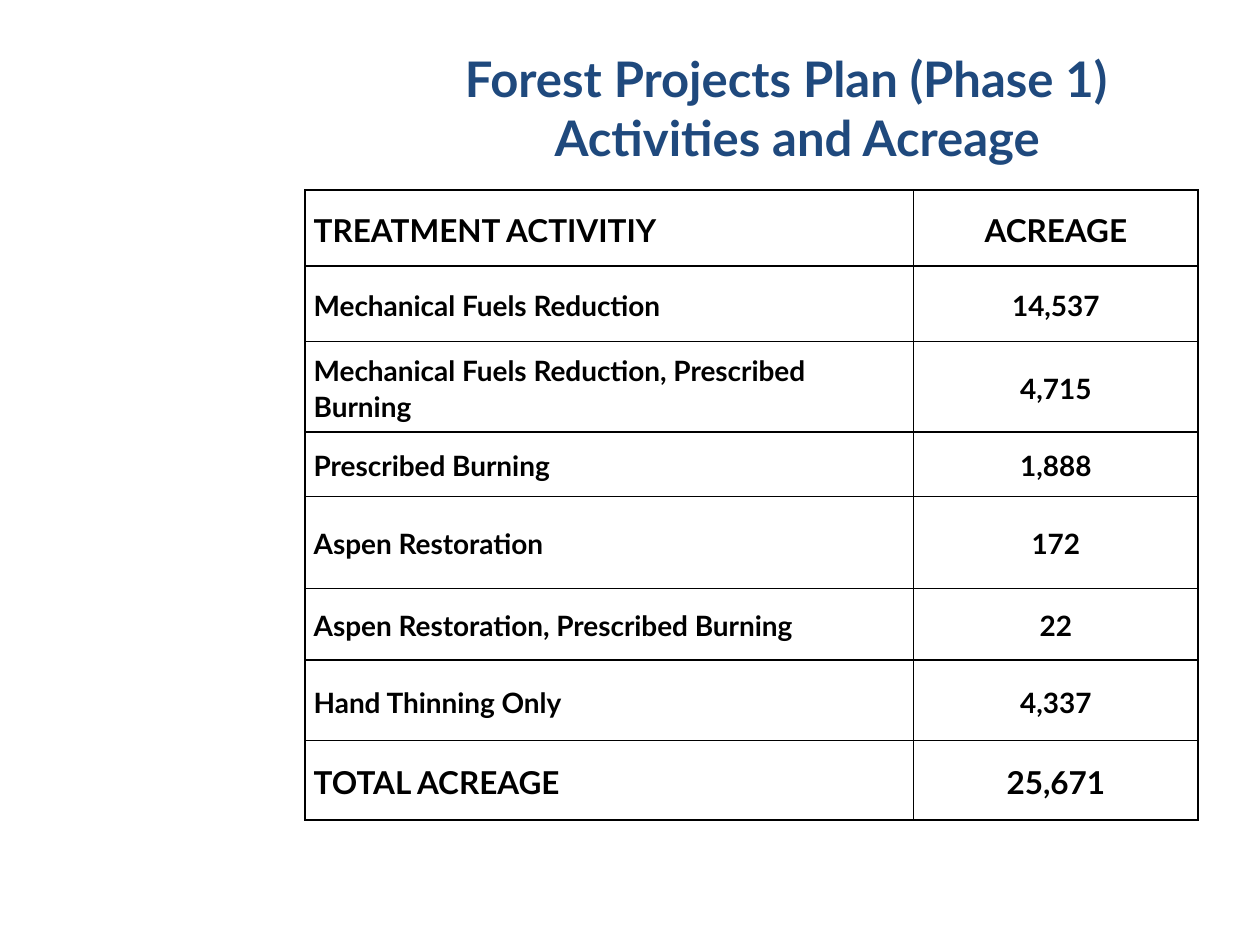
from lxml.etree import SubElement
from pptx import Presentation
from pptx.dml.color import RGBColor
from pptx.enum.text import MSO_ANCHOR as Anchor, MSO_AUTO_SIZE as AutoSize, PP_ALIGN as Align
from pptx.oxml.ns import qn
from pptx.util import Inches, Pt

FONT = "Lato"
BLACK = "000000"
TITLE_BLUE = "1F497D"
TITLE_LINES = ["Forest Projects Plan (Phase 1) ", " Activities and Acreage"]
COLUMN_WIDTHS = [4.83, 2.26]
ROWS = [
    (0.6, 18, "TREATMENT ACTIVITIY", "ACREAGE"),
    (0.6, 16, "Mechanical Fuels Reduction", "14,537"),
    (0.72, 16, "Mechanical Fuels Reduction, Prescribed Burning", "4,715"),
    (0.51, 16, "Prescribed Burning", "1,888"),
    (0.73, 16, "Aspen Restoration", "172"),
    (0.57, 16, "Aspen Restoration, Prescribed Burning", "22"),
    (0.64, 16, "Hand Thinning Only", "4,337"),
    (0.63, 18, "TOTAL ACREAGE", "25,671"),
]


def color(hex_string):
    """Turn a hex string into a colour."""
    return RGBColor.from_string(hex_string)


def add_run(paragraph, text, size, hex_string):
    """Add one bold run to a paragraph."""
    run = paragraph.add_run()
    run.text = text
    run.font.name = FONT
    run.font.size = Pt(size)
    run.font.bold = True
    run.font.color.rgb = color(hex_string)


def add_borders(cell, hex_string, width):
    """Draw a solid line on all four sides of a cell."""
    properties = cell._tc.get_or_add_tcPr()
    for side in ("lnL", "lnR", "lnT", "lnB"):
        line = SubElement(properties, qn(f"a:{side}"), w=str(Pt(width)))
        fill = SubElement(line, qn("a:solidFill"))
        SubElement(fill, qn("a:srgbClr"), val=hex_string)


def fill_cell(cell, text, size, alignment):
    """Write and format one table cell."""
    add_borders(cell, BLACK, 1)
    cell.fill.background()
    cell.vertical_anchor = Anchor.MIDDLE
    cell.margin_left = cell.margin_right = Inches(0.07)
    cell.margin_top = Inches(0.01)
    cell.margin_bottom = 0
    paragraph = cell.text_frame.paragraphs[0]
    paragraph.alignment = alignment
    paragraph.line_spacing = 1.07
    add_run(paragraph, text, size, BLACK)


def place_title(slide, left, top, width, height):
    """Place the two-line title in its box."""
    title = slide.shapes.title
    title.left, title.top = Inches(left), Inches(top)
    title.width, title.height = Inches(width), Inches(height)
    frame = title.text_frame
    frame.word_wrap = True
    frame.auto_size = AutoSize.NONE
    frame.vertical_anchor = Anchor.MIDDLE
    frame.margin_left = frame.margin_right = frame.margin_top = frame.margin_bottom = 0
    paragraph = frame.paragraphs[0]
    paragraph.alignment = Align.CENTER
    for index, line in enumerate(TITLE_LINES):
        if index:
            paragraph.add_line_break()
        add_run(paragraph, line, 28, TITLE_BLUE)


def place_acreage_table(slide, left, top, width, height):
    """Place the table of activities and acreage in its box."""
    frame = slide.shapes.add_table(
        len(ROWS), len(COLUMN_WIDTHS), Inches(left), Inches(top), Inches(width), Inches(height)
    )
    table = frame.table
    table.horz_banding = False
    for column, column_width in zip(table.columns, COLUMN_WIDTHS):
        column.width = Inches(column_width)
    for row, (row_height, size, activity, acreage) in zip(table.rows, ROWS):
        row.height = Inches(row_height)
        fill_cell(row.cells[0], activity, size, Align.LEFT)
        fill_cell(row.cells[1], acreage, size, Align.CENTER)


def main():
    """Build the slide and save it."""
    presentation = Presentation()
    presentation.slide_width, presentation.slide_height = Inches(10), Inches(7.5)
    slide = presentation.slides.add_slide(presentation.slide_layouts[5])
    place_title(slide, 2.74, 0.34, 7.09, 1.02)
    place_acreage_table(slide, 2.42, 1.51, sum(COLUMN_WIDTHS), sum(row[0] for row in ROWS))
    presentation.save("out.pptx")


if __name__ == "__main__":
    main()
